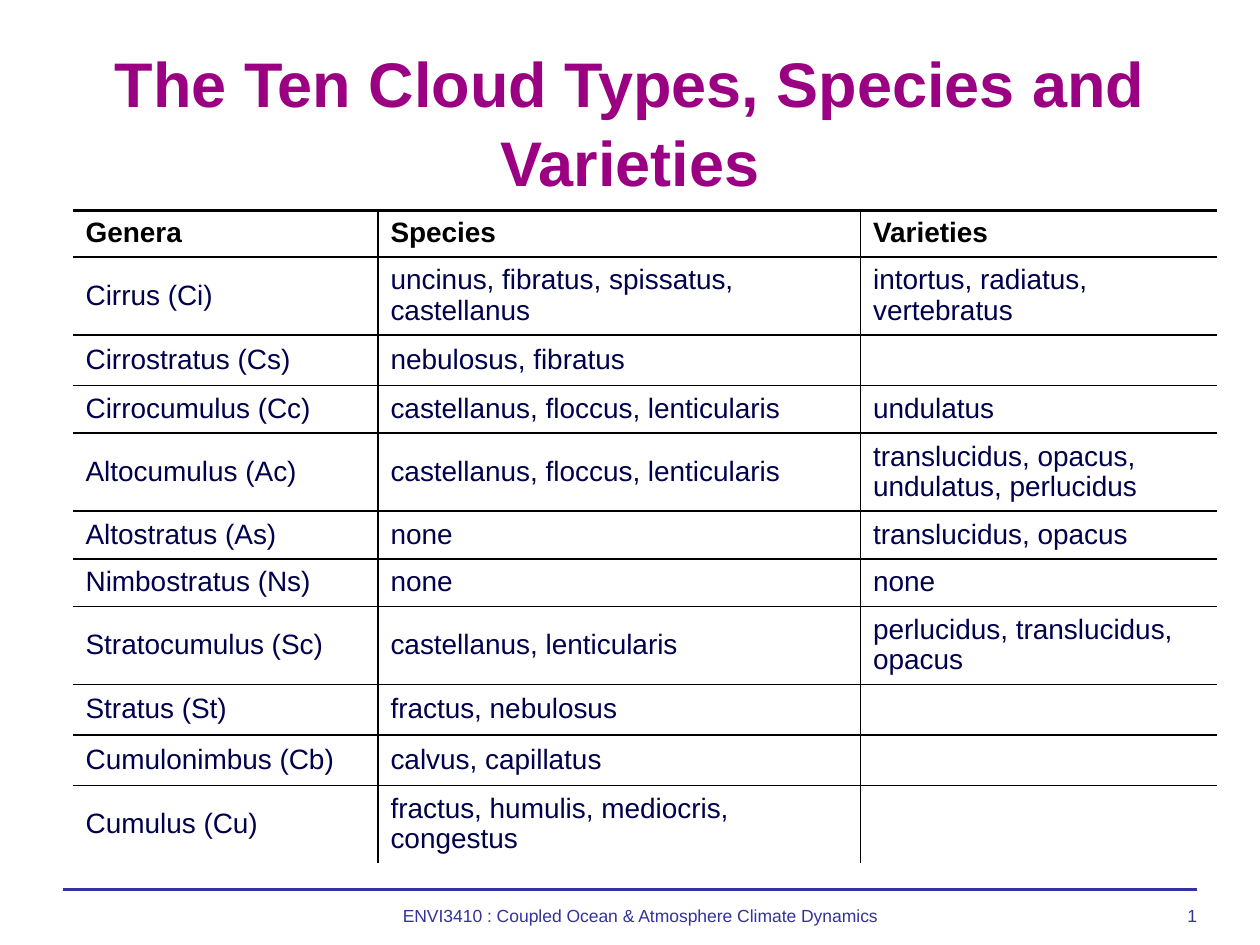
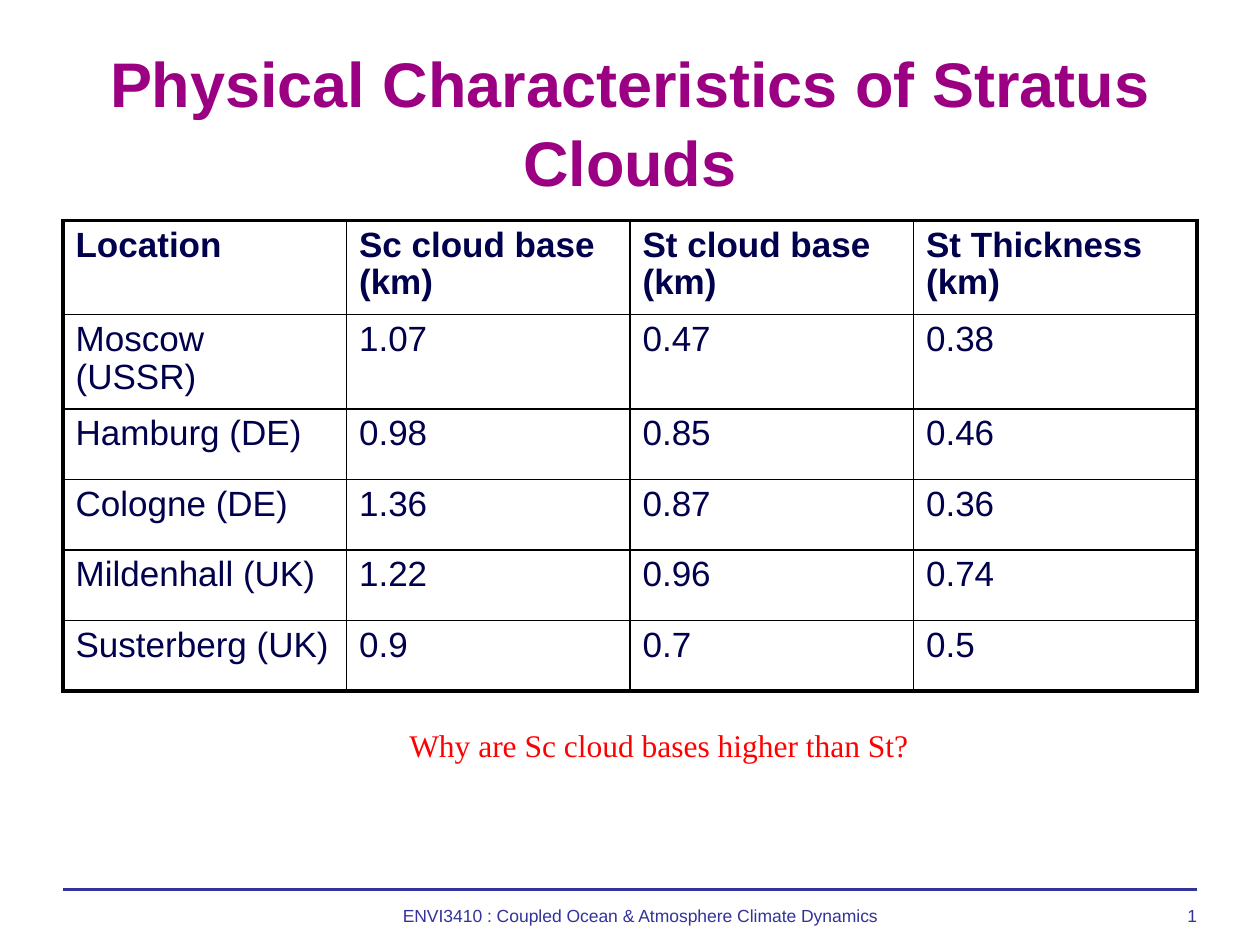
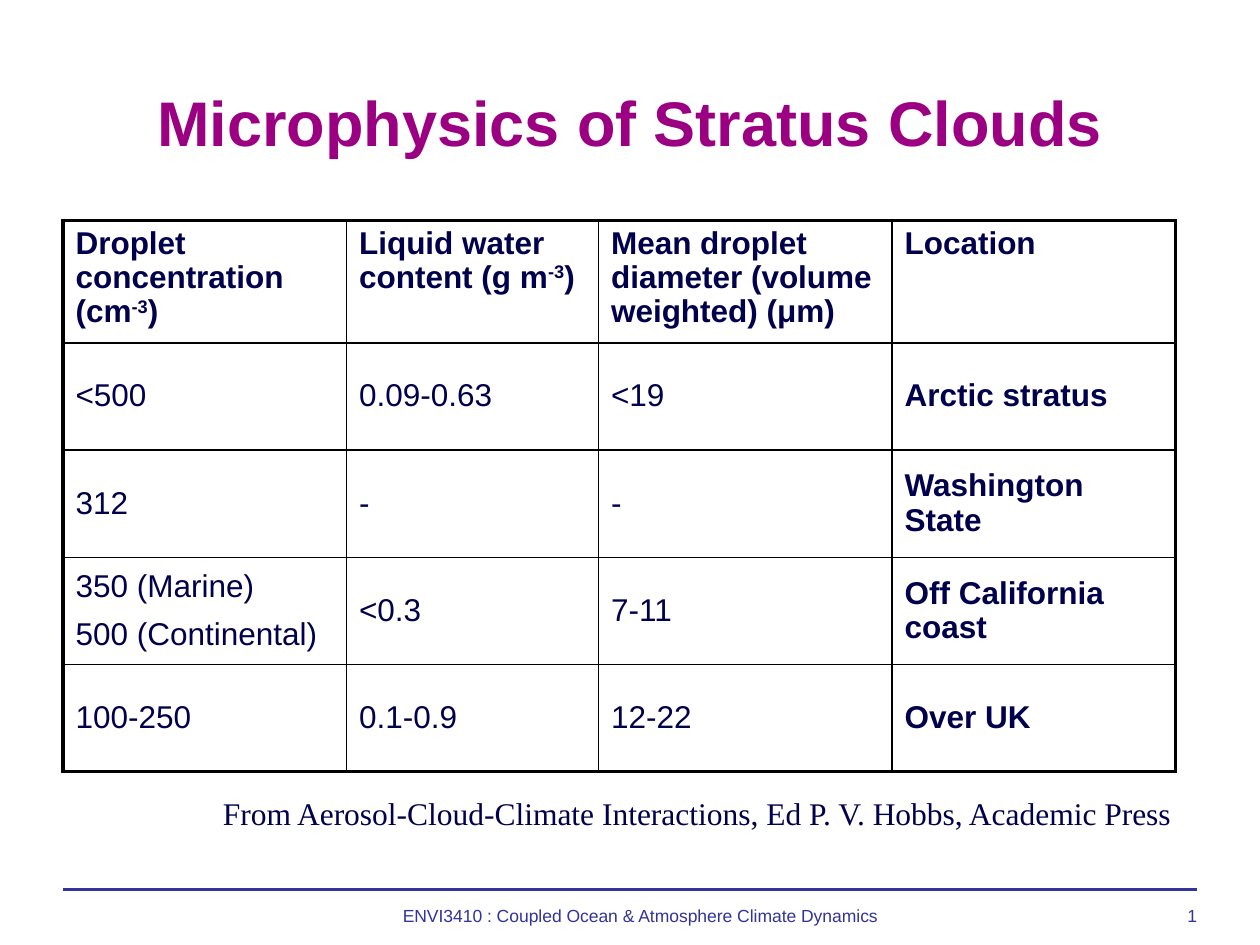
import pptx
import pptx.dml.color
import pptx.enum.shapes
import pptx.enum.text
import pptx.oxml.ns
import pptx.util
from lxml import etree

Inches = pptx.util.Inches
Pt = pptx.util.Pt
RGBColor = pptx.dml.color.RGBColor
ALIGN = pptx.enum.text.PP_ALIGN
ANCHOR = pptx.enum.text.MSO_ANCHOR
qn = pptx.oxml.ns.qn

# Slide grid, in inches
WIDTH, HEIGHT = 10, 7.5
MARGIN = WIDTH / 20
CONTENT = WIDTH - 2 * MARGIN
FOOTER_TOP = 7.06
TABLE_TOP = 1.75

# Shared style
PURPLE = RGBColor(0x9C, 0x00, 0x82)
NAVY = RGBColor(0x00, 0x00, 0x4C)
INDIGO = RGBColor(0x33, 0x33, 0x99)
RED = RGBColor(0xFF, 0x00, 0x00)
BLACK = RGBColor(0x00, 0x00, 0x00)
SANS, SERIF = "Arial", "Times New Roman"
THIN, THICK = 1, 2.25
COURSE = "ENVI3410 : Coupled Ocean & Atmosphere Climate Dynamics"

CLOUD_TYPES = [
    ["Genera", "Species", "Varieties"],
    ["Cirrus (Ci)", "uncinus, fibratus, spissatus, castellanus", "intortus, radiatus, vertebratus"],
    ["Cirrostratus (Cs)", "nebulosus, fibratus", ""],
    ["Cirrocumulus (Cc)", "castellanus, floccus, lenticularis", "undulatus"],
    ["Altocumulus (Ac)", "castellanus, floccus, lenticularis",
     "translucidus, opacus, undulatus, perlucidus"],
    ["Altostratus (As)", "none", "translucidus, opacus"],
    ["Nimbostratus (Ns)", "none", "none"],
    ["Stratocumulus (Sc)", "castellanus, lenticularis", "perlucidus, translucidus, opacus"],
    ["Stratus (St)", "fractus, nebulosus", ""],
    ["Cumulonimbus (Cb)", "calvus, capillatus", ""],
    ["Cumulus (Cu)", "fractus, humulis, mediocris, congestus", ""],
]
STRATUS_HEIGHTS = [
    ["Location", "Sc cloud base (km)", "St cloud base (km)", "St Thickness (km)"],
    ["Moscow (USSR)", "1.07", "0.47", "0.38"],
    ["Hamburg (DE)", "0.98", "0.85", "0.46"],
    ["Cologne (DE)", "1.36", "0.87", "0.36"],
    ["Mildenhall (UK)", "1.22", "0.96", "0.74"],
    ["Susterberg (UK)", "0.9", "0.7", "0.5"],
]
# A caret pair encloses a superscript; a line break starts a paragraph
MICROPHYSICS = [
    ["Droplet concentration (cm^-3^)", "Liquid water content (g m^-3^)",
     "Mean droplet diameter (volume weighted) (μm)", "Location"],
    ["<500", "0.09-0.63", "<19", "Arctic stratus"],
    ["312", "-", "-", "Washington State"],
    ["350 (Marine)\n500 (Continental)", "<0.3", "7-11", "Off California coast"],
    ["100-250", "0.1-0.9", "12-22", "Over UK"],
]


def add_run(paragraph, text, size, color, font=SANS, bold=False):
    run = paragraph.add_run()
    run.text = text
    run.font.size = Pt(size)
    run.font.name = font
    run.font.bold = bold
    run.font.color.rgb = color
    return run


def add_text(slide, text, box, size, color, font=SANS, bold=False, align=ALIGN.LEFT,
             anchor=ANCHOR.TOP, spacing=None, wrap=True, inset=True):
    frame = slide.shapes.add_textbox(*map(Inches, box)).text_frame
    frame.word_wrap = wrap
    frame.vertical_anchor = anchor
    if not inset:
        frame.margin_left = frame.margin_right = frame.margin_top = frame.margin_bottom = 0
    paragraph = frame.paragraphs[0]
    paragraph.alignment = align
    paragraph.line_spacing = spacing
    add_run(paragraph, text, size, color, font, bold)


def add_footer(slide):
    rule = slide.shapes.add_connector(
        pptx.enum.shapes.MSO_CONNECTOR.STRAIGHT, Inches(MARGIN), Inches(FOOTER_TOP),
        Inches(WIDTH - MARGIN), Inches(FOOTER_TOP))
    rule.line.color.rgb = INDIGO
    rule.line.width = Pt(1.5)
    etree.SubElement(rule._element.spPr, qn("a:effectLst"))
    for text, left, width, align in ((COURSE, 2.72, 4.72, ALIGN.CENTER),
                                     ("1", 7.76, 1.74, ALIGN.RIGHT)):
        add_text(slide, text, (left, FOOTER_TOP, width, 0.29), 10, INDIGO, align=align,
                 anchor=ANCHOR.BOTTOM, spacing=0.93, inset=False)


def start_slide(deck, title):
    slide = deck.slides.add_slide(deck.slide_layouts[6])
    add_footer(slide)
    add_text(slide, title, (MARGIN, 0.19, CONTENT, 1.52), 36, PURPLE, bold=True,
             align=ALIGN.CENTER, anchor=ANCHOR.MIDDLE, spacing=1.05)
    return slide


def set_borders(cell, widths):
    """Draw left, right, top and bottom borders; a width of 0 means none."""
    properties = cell._tc.get_or_add_tcPr()
    for side, width in zip("LRTB", widths):
        line = etree.SubElement(properties, qn("a:ln" + side), w=str(int(Pt(width))))
        if width:
            fill = etree.SubElement(line, qn("a:solidFill"))
            etree.SubElement(fill, qn("a:srgbClr"), val=str(BLACK))
        else:
            etree.SubElement(line, qn("a:noFill"))


def fill_cell(cell, text, size, color, bold):
    for index, line in enumerate(text.split("\n")):
        frame = cell.text_frame
        paragraph = frame.add_paragraph() if index else frame.paragraphs[0]
        paragraph.line_spacing = 0.97
        if index:
            paragraph.space_before = Pt(7.9)
        for part, words in enumerate(line.split("^")):
            run = add_run(paragraph, words, size, color, bold=bold)
            if part % 2:
                run._r.get_or_add_rPr().set("baseline", "30000")


def add_data_table(slide, rows, origin, columns, heights, size, edges, header_color=NAVY,
                   header_anchor=ANCHOR.TOP, body_anchor=ANCHOR.TOP, bold_column=None):
    """Edges are the outer left, right, top and bottom border widths."""
    frame = slide.shapes.add_table(len(rows), len(columns), *map(
        Inches, (*origin, sum(columns), sum(heights))))
    table = frame.table
    table.first_row = table.horz_banding = False
    for column, width in zip(table.columns, columns):
        column.width = Inches(width)
    for row, height in zip(table.rows, heights):
        row.height = Inches(height)
    left, right, top, bottom = edges
    for r, texts in enumerate(rows):
        for c, text in enumerate(texts):
            cell = table.cell(r, c)
            set_borders(cell, (THIN if c else left,
                               THIN if c < len(columns) - 1 else right,
                               THIN if r else top,
                               THIN if r < len(rows) - 1 else bottom))
            cell.fill.background()
            cell.vertical_anchor = body_anchor if r else header_anchor
            fill_cell(cell, text, size, NAVY if r else header_color,
                      bold=r == 0 or c == bold_column)


def main():
    deck = pptx.Presentation()
    deck.slide_width, deck.slide_height = Inches(WIDTH), Inches(HEIGHT)
    boxed = (THICK,) * 4

    # Cloud types: rows whose text wraps are taller
    slide = start_slide(deck, "The Ten Cloud Types, Species and Varieties")
    wrapped = (1, 4, 7, 10)
    heights = [0.37] + [0.6 if r in wrapped else 0.38 for r in range(1, len(CLOUD_TYPES))]
    add_data_table(slide, CLOUD_TYPES, (0.58, 1.67), [2.42, 3.83, 2.83], heights, 16,
                   (0, 0, THICK, 0), header_color=BLACK,
                   header_anchor=ANCHOR.MIDDLE, body_anchor=ANCHOR.MIDDLE)

    # Stratus heights by location
    slide = start_slide(deck, "Physical Characteristics of Stratus Clouds")
    add_data_table(slide, STRATUS_HEIGHTS, (MARGIN, TABLE_TOP), [CONTENT / 4] * 4,
                   [0.72] * 2 + [0.56] * 4, 20, boxed)
    add_text(slide, "Why are Sc cloud bases higher than St?", (3.15, 5.71, 4.17, 0.4),
             18, RED, SERIF, wrap=False)

    # Microphysics with its source
    slide = start_slide(deck, "Microphysics of Stratus Clouds")
    add_data_table(slide, MICROPHYSICS, (MARGIN, TABLE_TOP), [2.25, 2, 2.33, 2.25],
                   [0.94] + [0.85] * 4, 18, boxed, body_anchor=ANCHOR.MIDDLE, bold_column=3)
    add_text(slide, "From Aerosol-Cloud-Climate Interactions, Ed P. V. Hobbs, Academic Press",
             (1.67, 6.25, 7.83, 0.4), 18, NAVY, SERIF, wrap=False)

    deck.save("out.pptx")


if __name__ == "__main__":
    main()
